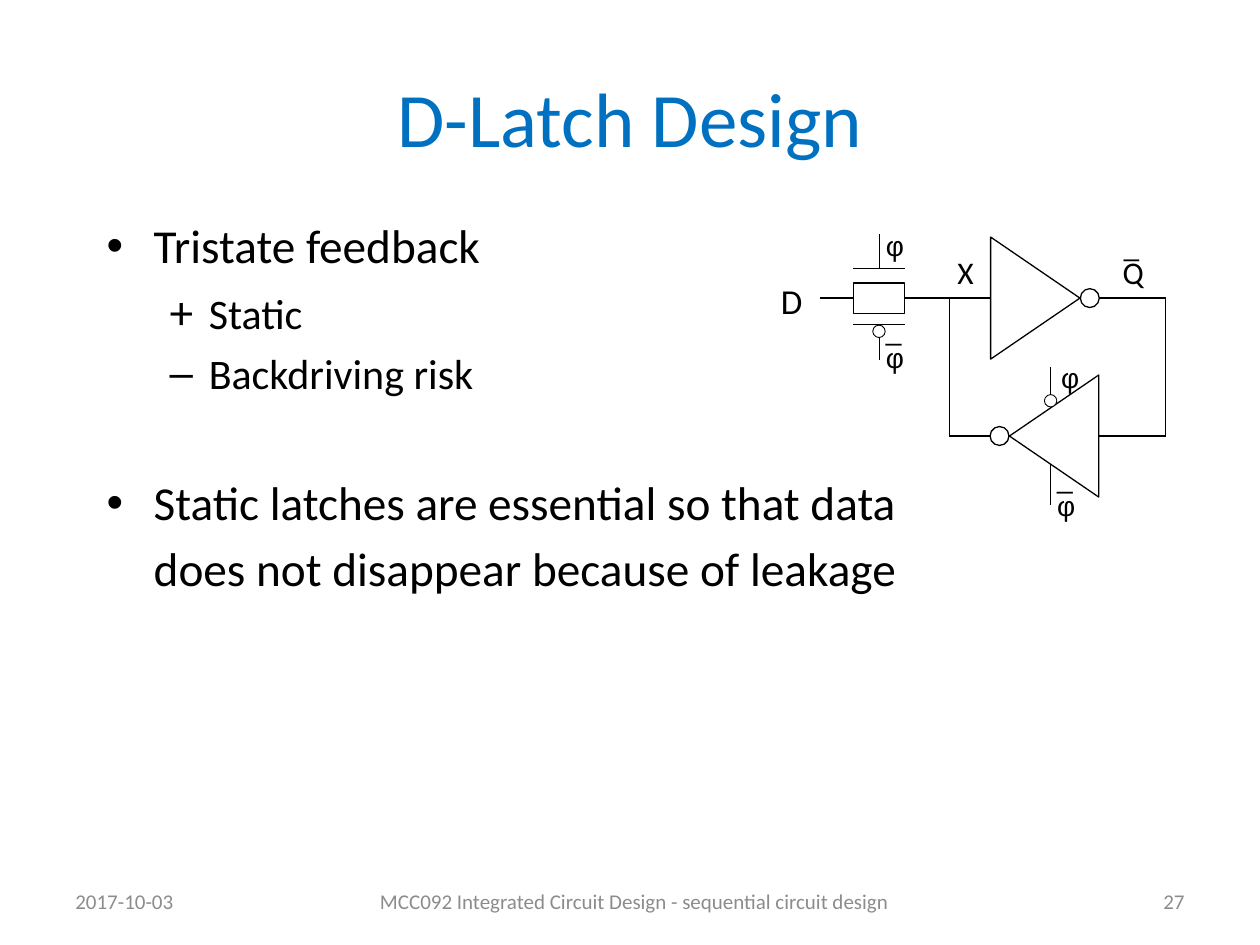
from dataclasses import dataclass

from lxml.etree import SubElement
from pptx import Presentation
from pptx.dml.color import RGBColor
from pptx.enum.shapes import MSO_CONNECTOR, MSO_SHAPE
from pptx.enum.text import MSO_ANCHOR, PP_ALIGN
from pptx.oxml.ns import qn
from pptx.util import Cm, Pt


@dataclass(frozen=True)
class Theme:
    title_color: RGBColor = RGBColor(0x00, 0x70, 0xC0)
    ink: RGBColor = RGBColor(0x00, 0x00, 0x00)
    paper: RGBColor = RGBColor(0xFF, 0xFF, 0xFF)
    muted: RGBColor = RGBColor(0x8C, 0x8C, 0x8C)
    font: str = "Calibri"
    symbol_font: str = "Arial"
    title_size: float = 44
    body_size: float = 27
    sub_size: float = 24
    input_size: float = 20
    node_size: float = 18
    clock_size: float = 16
    footer_size: float = 12
    thin: float = 0.5
    medium: float = 0.75


class SlideBuilder:
    def __init__(self, page, theme):
        self.page = page
        self.theme = theme

    def text_box(self, left, top, width, height, anchor=MSO_ANCHOR.TOP, inset=True):
        box = self.page.shapes.add_textbox(Cm(left), Cm(top), Cm(width), Cm(height))
        frame = box.text_frame
        frame.word_wrap = True
        frame.vertical_anchor = anchor
        if not inset:
            frame.margin_left = frame.margin_right = 0
            frame.margin_top = frame.margin_bottom = 0
        return frame

    def paragraph(self, frame, align=PP_ALIGN.LEFT, spacing=None):
        first = frame.paragraphs[0]
        para = frame.add_paragraph() if first.runs else first
        para.alignment = align
        if spacing:
            para.line_spacing = Pt(spacing)
        return para

    def span(self, para, text, size, color=None, font=None):
        span = para.add_run()
        span.text = text
        span.font.size = Pt(size)
        span.font.name = font or self.theme.font
        span.font.color.rgb = color or self.theme.ink

    def label(self, text, place, size, color=None, align=PP_ALIGN.LEFT,
              anchor=MSO_ANCHOR.TOP):
        para = self.paragraph(self.text_box(*place, anchor=anchor), align)
        self.span(para, text, size, color)

    def clock(self, left, top, inverted=False):
        theme = self.theme
        frame = self.text_box(left, top, 0.8, 1.22 if inverted else 0.61, inset=False)
        rows = [("_", 18), ("φ", 16)] if inverted else [("φ", None)]
        for text, spacing in rows:
            para = self.paragraph(frame, spacing=spacing)
            self.span(para, text, theme.clock_size, font=theme.symbol_font)

    def list_item(self, frame, spans, before, level=0, bullet=None, hanging=True):
        para = self.paragraph(frame)
        para.level = level
        para.space_before = Pt(before)
        margin, hang = [(0.95, 0.95), (2.06, 0.79)][level]
        properties = para._p.get_or_add_pPr()
        properties.set("marL", str(Cm(margin)))
        properties.set("indent", str(-Cm(hang) if hanging else 0))
        if bullet:
            SubElement(properties, qn("a:buFont"), typeface=self.theme.symbol_font)
            SubElement(properties, qn("a:buChar"), char=bullet)
        else:
            SubElement(properties, qn("a:buNone"))
        for text, size in spans:
            self.span(para, text, size)

    def wire(self, x1, y1, x2, y2, weight):
        line = self.page.shapes.add_connector(
            MSO_CONNECTOR.STRAIGHT, Cm(x1), Cm(y1), Cm(x2), Cm(y2))
        line.line.color.rgb = self.theme.ink
        line.line.width = Pt(weight)
        SubElement(line._element.spPr, qn("a:effectLst"))

    def symbol(self, kind, center_x, center_y, width, height, weight, rotation=0):
        shape = self.page.shapes.add_shape(
            kind, Cm(center_x - width / 2), Cm(center_y - height / 2),
            Cm(width), Cm(height))
        shape.rotation = rotation
        shape.shadow.inherit = False
        shape.fill.solid()
        shape.fill.fore_color.rgb = self.theme.paper
        shape.line.color.rgb = self.theme.ink
        shape.line.width = Pt(weight)

    def inverter(self, center_x, center_y, direction):
        """direction is 1 when the output points right, -1 when left."""
        weight = self.theme.medium
        self.symbol(MSO_SHAPE.ISOSCELES_TRIANGLE, center_x, center_y,
                    2.46, 1.8, weight, 90 * direction % 360)
        self.symbol(MSO_SHAPE.OVAL, center_x + direction * 1.1, center_y,
                    0.38, 0.38, weight)

    def clock_bubble(self, center_x, center_y):
        self.symbol(MSO_SHAPE.OVAL, center_x, center_y, 0.25, 0.25, self.theme.thin)


def main():
    theme = Theme()
    deck = Presentation()
    deck.slide_width, deck.slide_height = Cm(25.4), Cm(19.05)
    page = deck.slides.add_slide(deck.slide_layouts[6])
    build = SlideBuilder(page, theme)

    # Title and footer
    build.label("D-Latch Design", (1.27, 0.76, 22.86, 3.18), theme.title_size,
                theme.title_color, PP_ALIGN.CENTER, MSO_ANCHOR.MIDDLE)
    for text, left, width, align in [
        ("2017-10-03", 1.27, 5.92, PP_ALIGN.LEFT),
        ("MCC092 Integrated Circuit Design - sequential circuit design",
         7.29, 11, PP_ALIGN.CENTER),
        ("27", 18.21, 5.92, PP_ALIGN.RIGHT),
    ]:
        build.label(text, (left, 17.65, width, 1.02), theme.footer_size,
                    theme.muted, align, MSO_ANCHOR.MIDDLE)

    # Bullet list
    body, sub = theme.body_size, theme.sub_size
    frame = build.text_box(1.9, 4.24, 21.6, 12.7)
    build.list_item(frame, [("Tristate feedback", body)], 0, bullet="•")
    build.list_item(frame, [("+\t", body), ("Static", sub)], 5.4, level=1)
    build.list_item(frame, [("Backdriving risk", sub)], 4.8, level=1, bullet="–")
    build.list_item(frame, [("Static latches are essential so that data", body)],
                    43, bullet="•")
    build.list_item(frame, [("does not disappear because of leakage", body)],
                    5.4, hanging=False)

    # Circuit nodes
    forward_y, feedback_y = 6.01, 8.79
    input_x, node_x, output_x = 16.54, 19.13, 23.5
    gate_x, gate_width = 17.72, 1.04
    gate_left, gate_right = gate_x - gate_width / 2, gate_x + gate_width / 2
    plate_top, plate_bottom = 5.42, 6.55
    tristate_x = 21.18

    # Wires
    for x1, y1, x2, y2, weight in [
        (input_x, forward_y, output_x, forward_y, theme.medium),
        (node_x, feedback_y, output_x, feedback_y, theme.medium),
        (node_x, forward_y, node_x, feedback_y, theme.thin),
        (output_x, forward_y, output_x, feedback_y, theme.thin),
        (gate_left, plate_top, gate_right, plate_top, theme.thin),
        (gate_left, plate_bottom, gate_right, plate_bottom, theme.thin),
        (gate_x, 4.72, gate_x, plate_top, theme.thin),
        (gate_x, plate_bottom, gate_x, 7.26, theme.thin),
        (tristate_x, 7.39, tristate_x, 10.19, theme.thin),
    ]:
        build.wire(x1, y1, x2, y2, weight)

    # Transmission gate and inverters
    build.symbol(MSO_SHAPE.RECTANGLE, gate_x, forward_y, gate_width, 0.61, theme.medium)
    build.clock_bubble(gate_x, 6.68)
    build.inverter(20.87, forward_y, 1)
    build.inverter(21.25, feedback_y, -1)
    build.clock_bubble(tristate_x, 8.08)

    # Signal names
    build.label("D", (15.49, 5.51, 0.95, 0.97), theme.input_size)
    build.label("X", (19.05, 4.98, 0.95, 0.89), theme.node_size)
    output = build.paragraph(build.text_box(22.38, 4.62, 0.86, 1.24),
                             PP_ALIGN.CENTER, 16)
    build.span(output, "_", theme.node_size)
    output.add_line_break()
    build.span(output, "Q", theme.node_size)
    build.clock(17.86, 4.6)
    build.clock(17.86, 6.35, inverted=True)
    build.clock(21.39, 7.26)
    build.clock(21.31, 9.32, inverted=True)

    deck.save("out.pptx")


if __name__ == "__main__":
    main()
